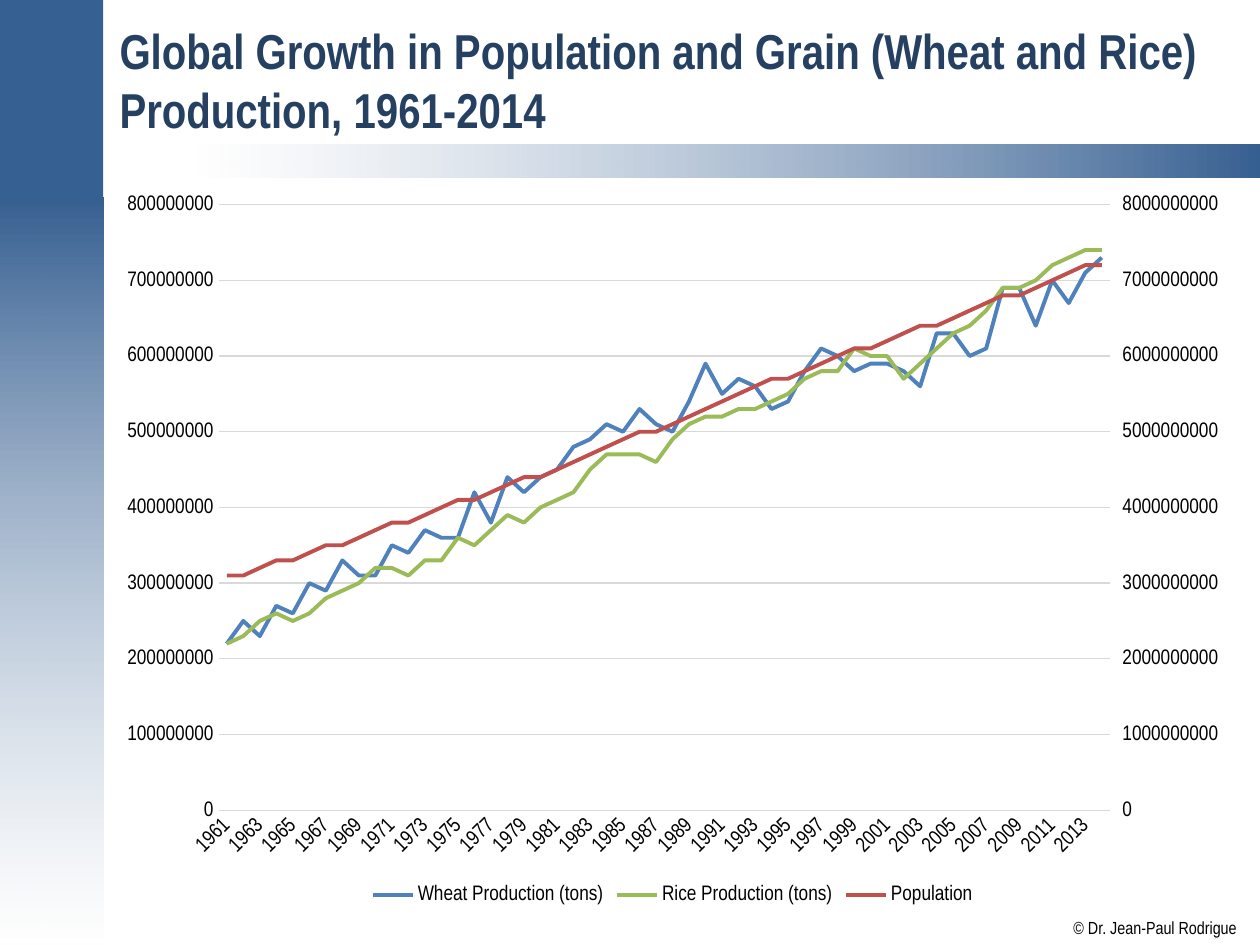
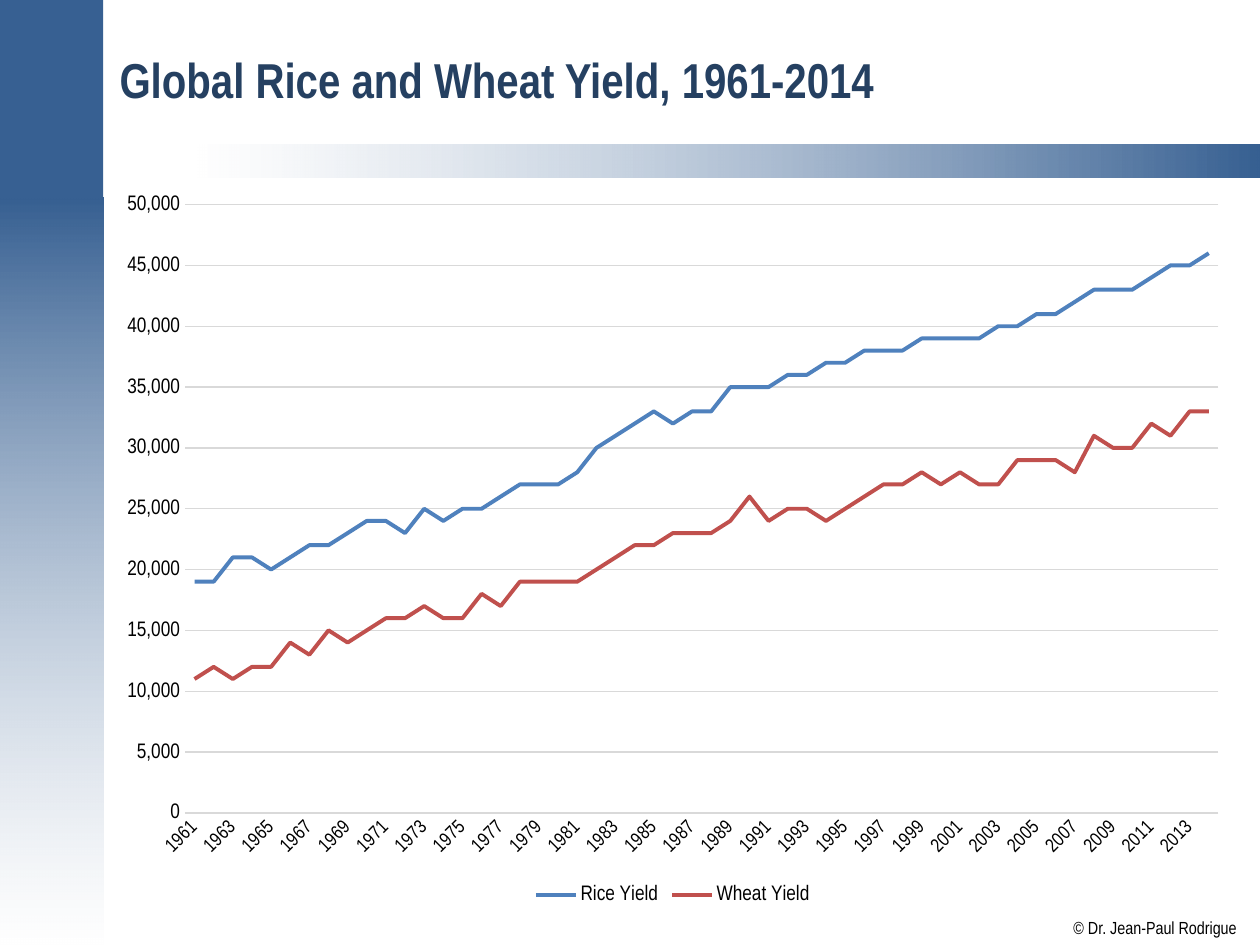
import copy

import pptx
import pptx.chart.data
import pptx.dml.color
import pptx.enum.chart
import pptx.enum.shapes
import pptx.enum.text
import pptx.oxml
import pptx.oxml.ns
import pptx.util
from lxml import etree
from pptx.util import Inches

qn = pptx.oxml.ns.qn

YEARS = [str(year) for year in range(1961, 2015)]

# Production in tens of millions of tons, population in hundreds of millions
WHEAT_PRODUCTION = [
    22, 25, 23, 27, 26, 30, 29, 33, 31, 31, 35, 34, 37, 36, 36, 42, 38, 44,
    42, 44, 45, 48, 49, 51, 50, 53, 51, 50, 54, 59, 55, 57, 56, 53, 54, 58,
    61, 60, 58, 59, 59, 58, 56, 63, 63, 60, 61, 69, 69, 64, 70, 67, 71, 73]
RICE_PRODUCTION = [
    22, 23, 25, 26, 25, 26, 28, 29, 30, 32, 32, 31, 33, 33, 36, 35, 37, 39,
    38, 40, 41, 42, 45, 47, 47, 47, 46, 49, 51, 52, 52, 53, 53, 54, 55, 57,
    58, 58, 61, 60, 60, 57, 59, 61, 63, 64, 66, 69, 69, 70, 72, 73, 74, 74]
POPULATION = [
    31, 31, 32, 33, 33, 34, 35, 35, 36, 37, 38, 38, 39, 40, 41, 41, 42, 43,
    44, 44, 45, 46, 47, 48, 49, 50, 50, 51, 52, 53, 54, 55, 56, 57, 57, 58,
    59, 60, 61, 61, 62, 63, 64, 64, 65, 66, 67, 68, 68, 69, 70, 71, 72, 72]

# Yields in thousands
RICE_YIELD = [
    19, 19, 21, 21, 20, 21, 22, 22, 23, 24, 24, 23, 25, 24, 25, 25, 26, 27,
    27, 27, 28, 30, 31, 32, 33, 32, 33, 33, 35, 35, 35, 36, 36, 37, 37, 38,
    38, 38, 39, 39, 39, 39, 40, 40, 41, 41, 42, 43, 43, 43, 44, 45, 45, 46]
WHEAT_YIELD = [
    11, 12, 11, 12, 12, 14, 13, 15, 14, 15, 16, 16, 17, 16, 16, 18, 17, 19,
    19, 19, 19, 20, 21, 22, 22, 23, 23, 23, 24, 26, 24, 25, 25, 24, 25, 26,
    27, 27, 28, 27, 28, 27, 27, 29, 29, 29, 28, 31, 30, 30, 32, 31, 33, 33]


def color(value):
    return pptx.dml.color.RGBColor.from_string(value)


def scaled(values, factor):
    return [value * factor for value in values]


class Deck:
    FONT = "Arial Narrow"
    BAND, TITLE, TEXT, GRID = "376092", "254061", "000000", "D9D9D9"
    BLUE, GREEN, RED = "4F81BD", "9BBB59", "C0504D"

    def __init__(self):
        self.presentation = pptx.Presentation()
        self.presentation.slide_width = Inches(10)
        self.presentation.slide_height = Inches(7.5)
        self.slide = None

    def add_slide(self, title):
        layout = self.presentation.slide_layouts[6]
        self.slide = self.presentation.slides.add_slide(layout)
        # Side band, title rule and its corner
        self.gradient(self.band(-0.01, 1.57, 0.83, 5.93), 270,
                      (self.BAND, 100), ("FFFFFF", 51))
        self.gradient(self.band(1.57, 1.15, 8.43, 0.26), 0,
                      ("FFFFFF", 50), (self.BAND, 100))
        self.band(-0.01, -0.01, 0.83, 1.58)
        # Copyright line and title
        credit = self.text(8.52, 7.28, 1.3, 0.17,
                           "© Dr. Jean-Paul Rodrigue", 10, self.TEXT)
        credit.margin_left = credit.margin_right = 0
        credit.margin_top = credit.margin_bottom = 0
        credit.auto_size = pptx.enum.text.MSO_AUTO_SIZE.SHAPE_TO_FIT_TEXT
        heading = self.text(0.85, 0.11, 8.98, 1.04, title, 28, self.TITLE,
                            bold=True)
        heading.word_wrap = True
        heading.vertical_anchor = pptx.enum.text.MSO_ANCHOR.MIDDLE

    def band(self, left, top, width, height):
        shape = self.slide.shapes.add_shape(
            pptx.enum.shapes.MSO_SHAPE.RECTANGLE,
            Inches(left), Inches(top), Inches(width), Inches(height))
        shape.shadow.inherit = False
        shape.fill.solid()
        shape.fill.fore_color.rgb = color(self.BAND)
        shape.line.fill.background()
        return shape

    def gradient(self, shape, angle, *ends):
        shape.fill.gradient()
        shape.fill.gradient_angle = angle
        for stop, (value, _) in zip(shape.fill.gradient_stops, ends):
            stop.color.rgb = color(value)
        stops = shape._element.spPr.iter(qn("a:srgbClr"))
        for element, (_, opacity) in zip(stops, ends):
            if opacity < 100:
                alpha = etree.SubElement(element, qn("a:alpha"))
                alpha.set("val", str(opacity * 1000))

    def text(self, left, top, width, height, words, size, value, bold=False):
        box = self.slide.shapes.add_textbox(
            Inches(left), Inches(top), Inches(width), Inches(height))
        box.text_frame.word_wrap = False
        span = box.text_frame.paragraphs[0].add_run()
        span.text = words
        self.style(span.font, size, value)
        span.font.bold = bold
        return box.text_frame

    def style(self, font, size, value=TEXT):
        font.name = self.FONT
        font.size = pptx.util.Pt(size)
        font.bold = False
        font.color.rgb = color(value)

    def grid_line(self, line):
        line.color.rgb = color(self.GRID)
        line.width = pptx.util.Pt(0.75)

    def line_chart(self, series, top_value, step, number_format, year_size):
        data = pptx.chart.data.CategoryChartData(number_format=number_format)
        data.categories = YEARS
        for name, values, _ in series:
            data.add_series(name, values)
        chart = self.slide.shapes.add_chart(
            pptx.enum.chart.XL_CHART_TYPE.LINE, Inches(0.83), Inches(1.43),
            Inches(9.02), Inches(5.79), data).chart
        self.style(chart.font, 10)
        chart.has_title = False
        chart.has_legend = True
        chart.legend.position = pptx.enum.chart.XL_LEGEND_POSITION.BOTTOM
        chart.legend.include_in_layout = False
        self.style(chart.legend.font, 12)

        # Lines
        plot = chart.plots[0]
        plot.vary_by_categories = False
        for line, (_, _, value) in zip(plot.series, series):
            line.smooth = False
            line.marker.style = pptx.enum.chart.XL_MARKER_STYLE.NONE
            line.format.line.color.rgb = color(value)
            line.format.line.width = pptx.util.Pt(2.25)

        # Axes
        no_tick = pptx.enum.chart.XL_TICK_MARK.NONE
        years, amounts = chart.category_axis, chart.value_axis
        for axis, size in ((years, year_size), (amounts, 12)):
            axis.major_tick_mark = axis.minor_tick_mark = no_tick
            self.style(axis.tick_labels.font, size)
        self.grid_line(years.format.line)
        years._element.txPr.bodyPr.set("rot", "-2700000")
        amounts.minimum_scale = 0
        amounts.maximum_scale = top_value
        amounts.major_unit = step
        amounts.tick_labels.number_format = number_format
        amounts.tick_labels.number_format_is_linked = False
        amounts.format.line.fill.background()
        amounts.has_major_gridlines = True
        self.grid_line(amounts.major_gridlines.format.line)
        return chart

    def move_last_to_right_axis(self, chart, top_value, step):
        years, amounts = chart.category_axis._element, chart.value_axis._element
        left_plot = years.getparent().find(qn("c:lineChart"))
        right_plot = copy.deepcopy(left_plot)
        left_plot.remove(left_plot.findall(qn("c:ser"))[-1])
        for line in right_plot.findall(qn("c:ser"))[:-1]:
            right_plot.remove(line)
        left_plot.addnext(right_plot)

        right_years, right_amounts = copy.deepcopy(years), copy.deepcopy(amounts)
        amounts.addnext(right_amounts)
        right_amounts.addnext(right_years)
        year_id, amount_id = "50010", "50020"
        for element, value in zip(right_plot.findall(qn("c:axId")),
                                  (year_id, amount_id)):
            element.set("val", value)

        def assign(axis, **values):
            for tag, value in values.items():
                axis.find(qn("c:" + tag)).set("val", value)

        assign(right_years, axId=year_id, crossAx=amount_id, delete="1")
        assign(right_amounts, axId=amount_id, crossAx=year_id, axPos="r",
               crosses="max", majorTickMark="out", majorUnit=str(step))
        assign(right_amounts.find(qn("c:scaling")), max=str(top_value))
        right_amounts.remove(right_amounts.find(qn("c:majorGridlines")))


def main():
    deck = Deck()

    # Production and population
    deck.add_slide("Global Growth in Population and Grain (Wheat and Rice) "
                   "Production, 1961-2014")
    chart = deck.line_chart(
        [("Wheat Production (tons)", scaled(WHEAT_PRODUCTION, 10**7), deck.BLUE),
         ("Rice Production (tons)", scaled(RICE_PRODUCTION, 10**7), deck.GREEN),
         ("Population", scaled(POPULATION, 10**8), deck.RED)],
        8 * 10**8, 10**8, "General", 12)
    deck.move_last_to_right_axis(chart, 8 * 10**9, 10**9)

    # Yields
    deck.add_slide("Global Rice and Wheat Yield, 1961-2014")
    deck.line_chart(
        [("Rice Yield", scaled(RICE_YIELD, 1000), deck.BLUE),
         ("Wheat Yield", scaled(WHEAT_YIELD, 1000), deck.RED)],
        50000, 5000, "#,##0", 11)

    deck.presentation.save("out.pptx")


if __name__ == "__main__":
    main()
